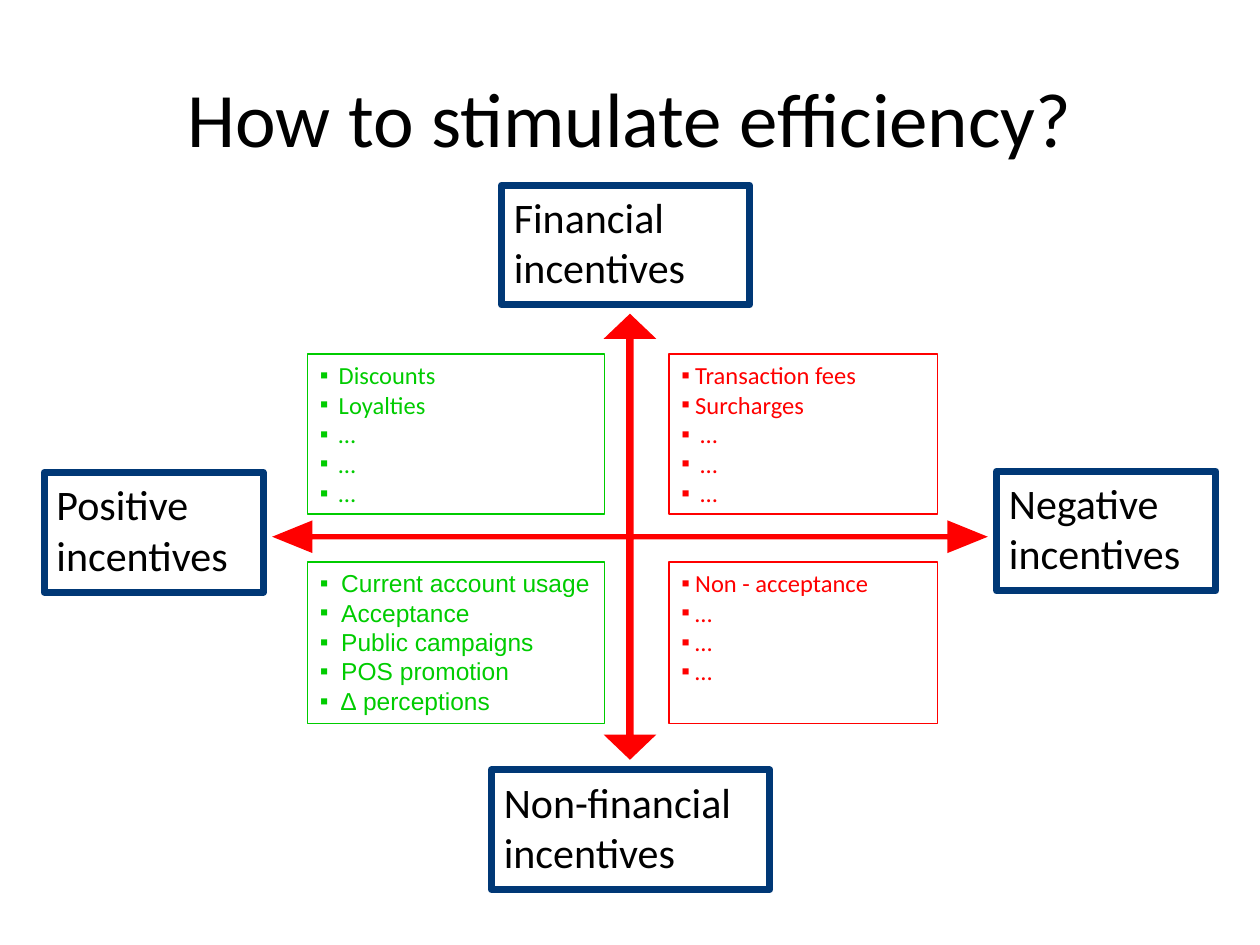
from lxml.etree import SubElement
from pptx import Presentation
from pptx.dml.color import RGBColor
from pptx.enum.shapes import MSO_SHAPE
from pptx.enum.text import MSO_ANCHOR, PP_ALIGN
from pptx.oxml.ns import qn
from pptx.util import Inches, Pt

THEME = {
    "ink": "000000", "navy": "003876", "red": "FF0000", "green": "00CC00",
    "title": 44, "label": 24, "item": 14,
    "thick": 4, "thin": 0.75,
    "main": "Calibri", "alt": "Arial",
}
WIDE, HIGH = Inches(10), Inches(7.5)

TITLE = "How to stimulate efficiency?"
LABELS = [
    ("Positive", (3.5, 50, 17.4)),
    ("Negative", (79.1, 49.87, 17.4)),
    ("Non-financial", (39, 81.47, 22.1)),
    ("Financial", (39.8, 19.6, 19.7)),
]
LABEL_HIGH = 12.67
COLS = [(24.4, 23.6, "green"), (53.1, 21.3, "red")]
ROWS = [(37.47, 16.93), (59.47, 17.07)]
LISTS = [
    (0, 0, "main", [(0.15, ["Discounts", "Loyalties", "…", "…", "…"])]),
    (1, 0, "main", [(0.11, ["Transaction fees", "Surcharges"]),
                    (0.15, ["…", "…", "…"])]),
    (0, 1, "alt", [(0.17, ["Current account usage", "Acceptance",
                           "Public campaigns", "POS promotion",
                           "∆ perceptions"])]),
    (1, 1, "main", [(0.11, ["Non - acceptance", "…", "…", "…"])]),
]
MID = (50, 56.8)
ARM = [(0, -23.6), (2.1, -20.93), (0.3, -20.93), (0.3, -0.27),
       (25.2, -0.27), (25.2, -1.73), (28.4, 0)]


def place(x, y):
    return int(WIDE * x / 100), int(HIGH * y / 100)


def style(item, **vals):
    for name, val in vals.items():
        setattr(item, name, val)


def write(para, text, size, font="main", hue="ink"):
    run = para.add_run()
    run.text = text
    style(run.font, size=Pt(THEME[size]), name=THEME[font])
    run.font.color.rgb = RGBColor.from_string(THEME[hue])


def lines(frame, count):
    return [frame.paragraphs[0]] + [frame.add_paragraph() for _ in range(count - 1)]


def box(slide, x, y, wide, high, hue, width):
    shape = slide.shapes.add_shape(
        MSO_SHAPE.RECTANGLE, *place(x, y), *place(wide, high))
    shape.shadow.inherit = False
    shape.fill.background()
    shape.line.color.rgb = RGBColor.from_string(THEME[hue])
    shape.line.width = Pt(THEME[width])
    style(shape.text_frame, word_wrap=True, vertical_anchor=MSO_ANCHOR.TOP)
    return shape.text_frame


def bullet(para, indent):
    props = para._p.get_or_add_pPr()
    gap = Inches(indent)
    props.set("marL", str(gap))
    props.set("indent", str(-gap))
    SubElement(props, qn("a:buFont")).set("typeface", THEME["alt"])
    SubElement(props, qn("a:buChar")).set("char", "▪")


def cross(slide):
    back = ARM[::-1]
    turns = [(ARM, 1, 1), (back, 1, -1), (ARM, -1, -1), (back, -1, 1)]
    dots = [place(MID[0] + sx * x, MID[1] + sy * y)
            for arm, sx, sy in turns for x, y in arm[:-1]]
    form = slide.shapes.build_freeform(*dots[0])
    form.add_line_segments(dots[1:], close=True)
    shape = form.convert_to_shape()
    shape.shadow.inherit = False
    shape.fill.solid()
    shape.fill.fore_color.rgb = RGBColor.from_string(THEME["red"])
    shape.line.fill.background()


def main():
    deck = Presentation()
    style(deck, slide_width=WIDE, slide_height=HIGH)
    slide = deck.slides.add_slide(deck.slide_layouts[6])

    frame = slide.shapes.add_textbox(*place(5, 4), *place(90, 16.67)).text_frame
    style(frame, word_wrap=True, vertical_anchor=MSO_ANCHOR.MIDDLE)
    head = frame.paragraphs[0]
    head.alignment = PP_ALIGN.CENTER
    write(head, TITLE, "title")

    cross(slide)

    for word, (x, y, wide) in LABELS:
        frame = box(slide, x, y, wide, LABEL_HIGH, "navy", "thick")
        for para, text in zip(lines(frame, 2), (word, "incentives")):
            para.alignment = PP_ALIGN.LEFT
            write(para, text, "label")

    for col, row, font, groups in LISTS:
        x, wide, hue = COLS[col]
        y, high = ROWS[row]
        frame = box(slide, x, y, wide, high, hue, "thin")
        items = [(gap, text) for gap, texts in groups for text in texts]
        for para, (gap, text) in zip(lines(frame, len(items)), items):
            para.alignment = PP_ALIGN.LEFT
            bullet(para, gap)
            write(para, text, "item", font, hue)

    deck.save("out.pptx")


if __name__ == "__main__":
    main()
